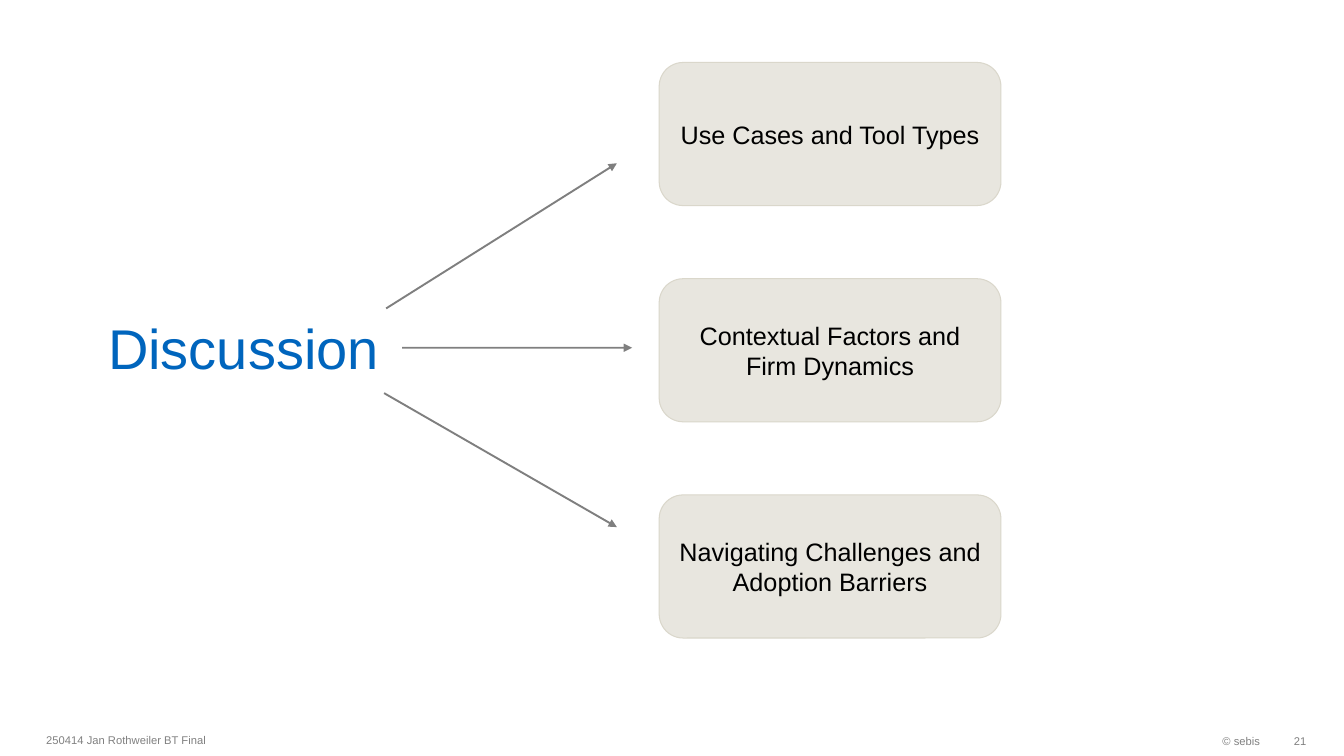
"""Build the discussion slide with its three branching topics."""
from lxml import etree
from pptx import Presentation
from pptx import util as u
from pptx.dml.color import RGBColor
from pptx.enum import shapes, text
from pptx.oxml.ns import qn

COLORS = {
    "title": "0065BD",
    "footer": "808080",
    "box": "E8E6DF",
    "border": "DAD7CB",
    "ink": "000000",
}
TOPICS = [
    "Use Cases and Tool Types",
    "Contextual Factors and Firm Dynamics",
    "Navigating Challenges and Adoption Barriers",
]
ARROWS = [
    (28.73, 40.8, 45.9, 21.6),
    (29.93, 46, 47.03, 46),
    (28.58, 52, 45.9, 69.73),
]
FOOTERS = [
    ("© sebis", (76.95, 95.87, 17.55, 4.27), text.PP_ALIGN.RIGHT, 0.1),
    ("21", (94.5, 95.87, 2.7, 4.27), text.PP_ALIGN.RIGHT, 0),
    ("250414 Jan Rothweiler BT Final", (2.7, 95.73, 47.25, 4.27), text.PP_ALIGN.LEFT, 0.1),
]


class SlideBuilder:
    """Place styled elements on a grid of 100 columns by 100 rows."""

    font_name = "Arial"

    def __init__(self, presentation):
        self.column = presentation.slide_width / 100
        self.row = presentation.slide_height / 100
        self.slide = presentation.slides.add_slide(presentation.slide_layouts[5])

    def grid(self, *values):
        units = (self.column, self.row) * 2
        return [round(value * unit) for value, unit in zip(values, units)]

    def label(self, shape, content, size, color, align):
        frame = shape.text_frame
        frame.text = content
        frame.word_wrap = True
        frame.vertical_anchor = text.MSO_ANCHOR.MIDDLE
        paragraph = frame.paragraphs[0]
        paragraph.alignment = align
        paragraph.font.name = self.font_name
        paragraph.font.size = u.Pt(size)
        paragraph.font.color.rgb = RGBColor.from_string(COLORS[color])
        return frame

    def title(self, content, area):
        shape = self.slide.shapes.title
        shape.left, shape.top, shape.width, shape.height = self.grid(*area)
        frame = self.label(shape, content, 40, "title", text.PP_ALIGN.CENTER)
        frame.auto_size = text.MSO_AUTO_SIZE.NONE
        frame.margin_top = frame.margin_bottom = 0

    def footer(self, content, area, align, margin_right):
        shape = self.slide.shapes.add_textbox(*self.grid(*area))
        frame = self.label(shape, content, 8, "footer", align)
        frame.margin_right = u.Inches(margin_right)

    def box(self, content, area):
        shape = self.slide.shapes.add_shape(
            shapes.MSO_SHAPE.ROUNDED_RECTANGLE, *self.grid(*area))
        shape.shadow.inherit = False
        shape.fill.solid()
        shape.fill.fore_color.rgb = RGBColor.from_string(COLORS["box"])
        shape.line.color.rgb = RGBColor.from_string(COLORS["border"])
        shape.line.width = u.Pt(0.75)
        self.label(shape, content, 18, "ink", text.PP_ALIGN.CENTER)

    def arrow(self, ends):
        connector = self.slide.shapes.add_connector(
            shapes.MSO_CONNECTOR.STRAIGHT, *self.grid(*ends))
        connector.line.width = u.Pt(1.35)
        connector.line.color.rgb = RGBColor.from_string(COLORS["ink"])
        outline = connector.element.spPr.find(qn("a:ln"))
        color = outline.find(".//" + qn("a:srgbClr"))
        etree.SubElement(color, qn("a:alpha"), val="50000")
        etree.SubElement(outline, qn("a:tailEnd"), type="triangle")
        etree.SubElement(connector.element.spPr, qn("a:effectLst"))


def main():
    presentation = Presentation()
    presentation.slide_width = u.Inches(13.33)
    presentation.slide_height = u.Inches(7.5)
    builder = SlideBuilder(presentation)
    builder.title("Discussion", (6.3, 34.93, 23.62, 22))
    for footer in FOOTERS:
        builder.footer(*footer)
    for index, topic in enumerate(TOPICS):
        builder.box(topic, (49.05, 8.27 + 28.6 * index, 25.43, 18.93))
    for ends in ARROWS:
        builder.arrow(ends)
    presentation.save("out.pptx")


if __name__ == "__main__":
    main()
